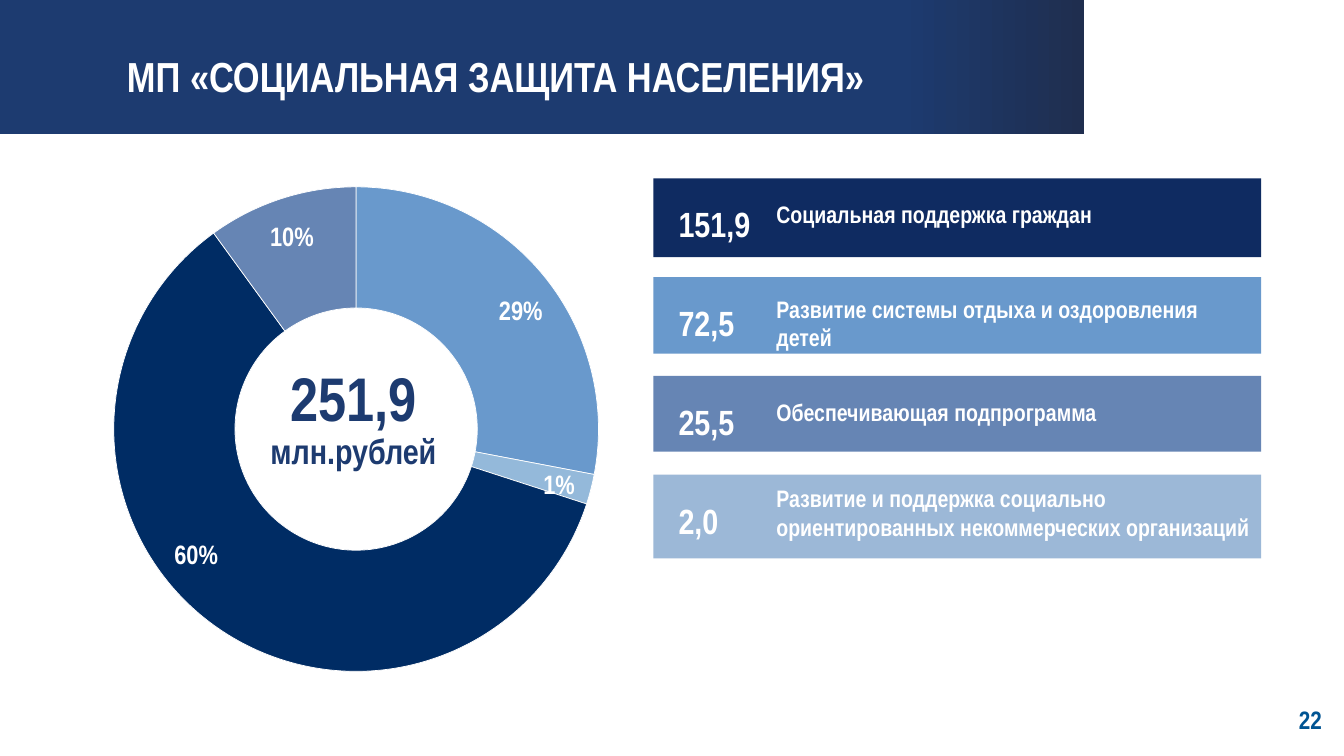
from copy import deepcopy
from dataclasses import dataclass

from lxml.etree import SubElement
from pptx import Presentation
from pptx.chart.data import CategoryChartData
from pptx.dml.color import RGBColor
from pptx.enum.chart import XL_CHART_TYPE
from pptx.enum.shapes import MSO_SHAPE
from pptx.enum.text import MSO_ANCHOR, MSO_AUTO_SIZE, PP_ALIGN
from pptx.oxml.ns import qn
from pptx.util import Inches, Pt


@dataclass(frozen=True)
class Theme:
    """Colours, fonts and type sizes."""
    white: str = "FFFFFF"
    navy: str = "1D3B70"
    dusk: str = "1F2E4F"
    deep: str = "0F2B61"
    sky: str = "6999CC"
    slate: str = "6685B4"
    mist: str = "9CB8D7"
    ink: str = "002C64"
    pale: str = "94B9DA"
    page: str = "005493"
    face: str = "Arial Narrow"
    plain: str = "Calibri"
    total: int = 44
    title: int = 30
    value: int = 25
    share: int = 19
    folio: int = 18
    label: int = 17
    chart: int = 10


class Deck:
    """Holds the style and the current slide."""

    def __init__(self, theme):
        self.theme = theme
        self.show = Presentation()
        self.show.slide_width = Inches(13.33)
        self.show.slide_height = Inches(7.5)
        self.slide = self.show.slides.add_slide(self.show.slide_layouts[6])

    def rgb(self, tone):
        """Turn a theme colour name into a colour."""
        return RGBColor.from_string(getattr(self.theme, tone))

    def bar(self, at, tone):
        """Draw a plain filled bar."""
        bar = self.slide.shapes.add_shape(MSO_SHAPE.RECTANGLE, *map(Inches, at))
        bar.shadow.inherit = False
        bar.line.fill.background()
        bar.fill.solid()
        bar.fill.fore_color.rgb = self.rgb(tone)
        return bar

    def band(self, at):
        """Draw the header band that darkens at its right end."""
        band = self.bar(at, "navy")
        band.rotation = 180
        band.fill.gradient()
        band.fill.gradient_angle = 0
        stops = band.fill.gradient_stops
        for stop, spot, tone in zip(stops, (0, 0.17), ("dusk", "navy")):
            stop.position = spot
            stop.color.rgb = self.rgb(tone)
        marks = band.fill._fill._gradFill.find(qn("a:gsLst"))
        last = deepcopy(marks[-1])
        last.set("pos", "100000")
        marks.append(last)

    def text(self, at, words, size, tone="white", align=PP_ALIGN.LEFT,
             mid=False, grow=True, wrap=True, dent=0):
        """Write one bold line or paragraph in a box."""
        frame = self.slide.shapes.add_textbox(*map(Inches, at)).text_frame
        frame.word_wrap = wrap
        frame.auto_size = MSO_AUTO_SIZE.SHAPE_TO_FIT_TEXT if grow else MSO_AUTO_SIZE.NONE
        frame.vertical_anchor = MSO_ANCHOR.MIDDLE if mid else MSO_ANCHOR.TOP
        for side in ("left", "top", "right", "bottom"):
            setattr(frame, f"margin_{side}", Inches(0.05))
        para = frame.paragraphs[0]
        para.alignment = align
        if dent:
            para._p.get_or_add_pPr().set("indent", str(Inches(dent)))
        run = para.add_run()
        run.text = words
        font = run.font
        font.name, font.size, font.bold = self.theme.face, Pt(size), True
        font.color.rgb = self.rgb(tone)

    def ring(self, at, parts):
        """Add the doughnut chart from value and colour pairs."""
        data = CategoryChartData()
        data.categories = [str(n + 1) for n in range(len(parts))]
        data.add_series("Series 1", [value for value, _ in parts])
        chart = self.slide.shapes.add_chart(
            XL_CHART_TYPE.DOUGHNUT, *map(Inches, at), data).chart
        chart.has_legend = chart.has_title = False
        chart.font.name = self.theme.plain
        chart.font.size = Pt(self.theme.chart)
        chart.font.color.rgb = self.rgb("white")
        plot = chart.plots[0]
        plot.vary_by_categories = True
        plot.has_data_labels = False
        for n, (_, tone) in enumerate(parts):
            look = plot.series[0].points[n].format
            look.fill.solid()
            look.fill.fore_color.rgb = self.rgb(tone)
            look.line.color.rgb = self.rgb("white")
            look.line.width = Pt(0.5)
        area = chart._chartSpace.chart.plotArea
        area.find(".//" + qn("c:holeSize")).set("val", "70")
        for old in area.findall(qn("c:layout")):
            area.remove(old)
        frame = SubElement(area, qn("c:layout"))
        area.insert(0, frame)
        spot = SubElement(frame, qn("c:manualLayout"))
        for tag, val in (("layoutTarget", "inner"), ("xMode", "edge"),
                         ("yMode", "edge"), ("x", "0.01"), ("y", "0"),
                         ("w", "0.99"), ("h", "0.99")):
            SubElement(spot, qn("c:" + tag)).set("val", val)

    def row(self, top, tall, tone, value, label, box):
        """Draw one programme row: bar, label and amount."""
        lift, wide, high = box
        self.bar((6.48, top, 6.03, tall), tone)
        self.text((7.65, top - lift, wide, high), label, self.theme.label,
                  mid=True, grow=False)
        self.text((6.68, top + 0.19, 1.07, 0.52), value, self.theme.value, mid=True)


def main():
    """Build and save the slide."""
    theme = Theme()
    deck = Deck(theme)
    mid = PP_ALIGN.CENTER
    deck.band((0, 0, 10.75, 1.33))
    deck.text((0.71, 0.45, 13.23, 0.61), "МП «СОЦИАЛЬНАЯ ЗАЩИТА НАСЕЛЕНИЯ»",
              theme.title, dent=0.5)
    deck.ring((1.08, 1.85, 4.86, 4.86),
              ((28, "sky"), (2, "pale"), (60, "ink"), (10, "slate")))
    deck.text((1.83, 3.52, 3.35, 0.84), "251,9", theme.total, "navy", mid)
    deck.text((1.83, 4.21, 3.35, 0.52), "млн.рублей", theme.value, "navy", mid)
    for left, top, share in ((4.76, 2.87, "29%"), (5.14, 4.59, "1%"),
                             (1.54, 5.29, "60%"), (2.49, 2.13, "10%")):
        deck.text((left, top, 0.81, 0.42), share, theme.share, align=mid)
    rows = (
        (0.78, "deep", "151,9", "Социальная поддержка граждан", (0, 4.62, 0.71)),
        (0.76, "sky", "72,5", "Развитие системы отдыха и оздоровления детей",
         (0, 4.62, 0.91)),
        (0.75, "slate", "25,5", "Обеспечивающая подпрограмма", (0, 4.62, 0.71)),
        (0.83, "mist", "2,0", "Развитие и поддержка социально ориентированных "
         "некоммерческих организаций", (0.08, 4.86, 0.91)),
    )
    for n, row in enumerate(rows):
        deck.row(1.77 + 0.98 * n, *row)
    deck.text((12.82, 6.94, 0.34, 0.39), "22", theme.folio, "page",
              PP_ALIGN.RIGHT, wrap=False)
    deck.show.save("out.pptx")


if __name__ == "__main__":
    main()
